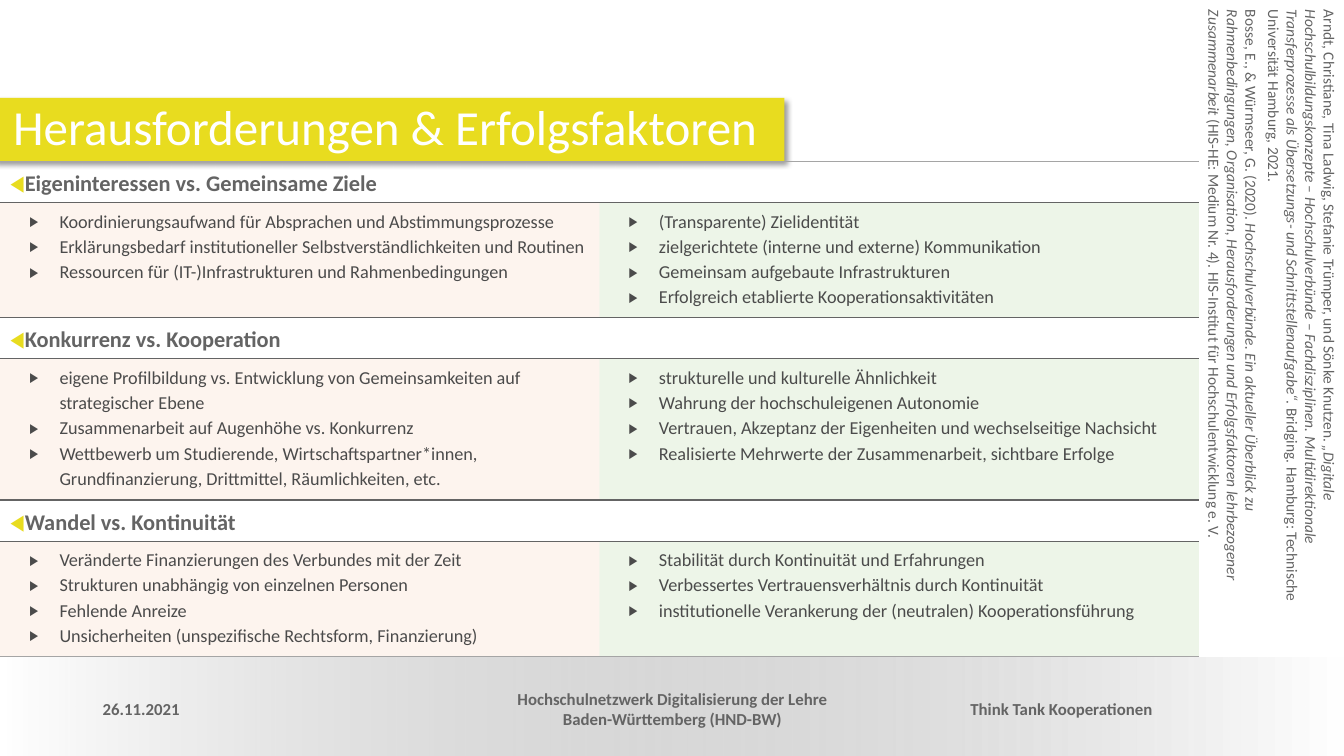
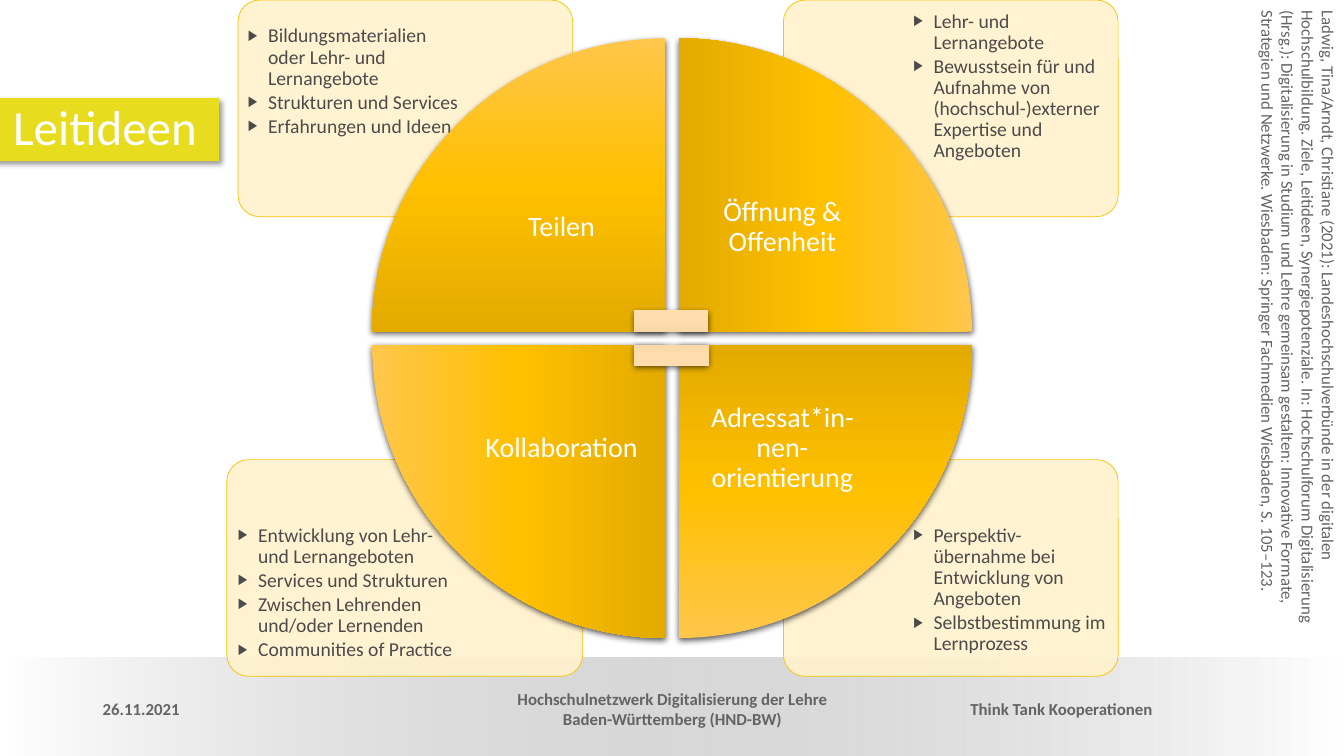
from lxml import etree
from pptx import Presentation
from pptx import util as u
from pptx.dml.color import RGBColor
from pptx.enum import shapes as kinds
from pptx.enum import text as t
from pptx.oxml.ns import qn

Inches = u.Inches
WHITE = RGBColor(0xFF, 0xFF, 0xFF)
BLACK = RGBColor(0, 0, 0)
GREY = RGBColor(0x64, 0x64, 0x64)
DARK_GREY = RGBColor(0x4B, 0x4B, 0x4B)
LIGHT_GREY = RGBColor(0xA5, 0xA5, 0xA5)
LIME = RGBColor(0xE8, 0xDC, 0x1F)
PEACH = RGBColor(0xF8, 0xCB, 0xAD)
GREEN = RGBColor(0xA9, 0xD1, 0x8E)
CREAM = RGBColor(0xFF, 0xF2, 0xCC)
AMBER = RGBColor(0xFF, 0xC0, 0x00)
BAND_STOPS = [(0, GREY, 0), (100, WHITE, 100)]
WEDGE_STOPS = [(0, RGBColor(0xFF, 0xC6, 0x4B), 100), (50, AMBER, 100),
               (100, RGBColor(0xE3, 0xAB, 0x00), 100)]
MINUS_STOPS = [(0, RGBColor(0xFF, 0xE2, 0xB9), 100),
               (50, RGBColor(0xFF, 0xDC, 0xAB), 100),
               (100, RGBColor(0xE5, 0xC4, 0x96), 100)]
TITLE_SHADOW = {"alpha": 40, "blur": 4, "distance": 3, "angle": 45}
CYCLE_SHADOW = {"alpha": 63, "blur": 4.5, "distance": 1.5, "angle": 90}

LEFT, CENTER, RIGHT = t.PP_ALIGN.LEFT, t.PP_ALIGN.CENTER, t.PP_ALIGN.RIGHT
TOP, MIDDLE = t.MSO_ANCHOR.TOP, t.MSO_ANCHOR.MIDDLE
NO_STYLE = "{2D5ABB26-0587-4C30-8999-92F81FD0307C}"

TITLE_FONT = {"size": u.Pt(35), "color": WHITE}
FOOTER_FONT = {"size": u.Pt(12), "color": GREY, "bold": True}
HEADING_FONT = {"size": u.Pt(16), "color": GREY, "bold": True}
CELL_FONT = {"size": u.Pt(13), "color": DARK_GREY}
CALLOUT_FONT = {"size": u.Pt(14), "color": DARK_GREY}
WEDGE_FONT = {"size": u.Pt(20), "color": WHITE}

FOOTERS = [
    (0.92, 3, LEFT, "26.11.2021"),
    (4.8, 3.74, CENTER,
     "Hochschulnetzwerk Digitalisierung der Lehre Baden-Württemberg (HND-BW)"),
    (8.77, 2.76, RIGHT, "Think Tank Kooperationen"),
]

CHALLENGES = [
    ("Eigeninteressen vs. Gemeinsame Ziele", 1.14,
     ["Koordinierungsaufwand für Absprachen und Abstimmungsprozesse",
      "Erklärungsbedarf institutioneller Selbstverständlichkeiten und Routinen",
      "Ressourcen für (IT-)Infrastrukturen und Rahmenbedingungen"],
     ["(Transparente) Zielidentität",
      "zielgerichtete (interne und externe) Kommunikation",
      "Gemeinsam aufgebaute Infrastrukturen",
      "Erfolgreich etablierte Kooperationsaktivitäten"]),
    ("Konkurrenz vs. Kooperation", 1.4,
     ["eigene Profilbildung vs. Entwicklung von Gemeinsamkeiten auf "
      "strategischer Ebene",
      "Zusammenarbeit auf Augenhöhe vs. Konkurrenz",
      "Wettbewerb um Studierende, Wirtschaftspartner*innen, "
      "Grundfinanzierung, Drittmittel, Räumlichkeiten, etc."],
     ["strukturelle und kulturelle Ähnlichkeit",
      "Wahrung der hochschuleigenen Autonomie",
      "Vertrauen, Akzeptanz der Eigenheiten und wechselseitige Nachsicht",
      "Realisierte Mehrwerte der Zusammenarbeit, sichtbare Erfolge"]),
    ("Wandel vs. Kontinuität", 1.14,
     ["Veränderte Finanzierungen des Verbundes mit der Zeit",
      "Strukturen unabhängig von einzelnen Personen",
      "Fehlende Anreize",
      "Unsicherheiten (unspezifische Rechtsform, Finanzierung)"],
     ["Stabilität durch Kontinuität und Erfahrungen",
      "Verbessertes Vertrauensverhältnis durch Kontinuität",
      "institutionelle Verankerung der (neutralen) Kooperationsführung"]),
]

# Each paragraph is a list of (text, italic) runs.
CHALLENGE_SOURCES = [
    [("Arndt, Christiane, Tina Ladwig, Stefanie Trümper, und Sönke Knutzen. ", False),
     ("„Digitale Hochschulbildungskonzepte – Hochschulverbünde – "
      "Fachdisziplinen. Multidirektionale Transferprozesse als Übersetzungs- "
      "und Schnittstellenaufgabe“", True),
     (". Bridging. Hamburg: Technische Universität Hamburg, 2021.", False)],
    [("Bosse, E., & Würmseer, G. (2020). ", False),
     ("Hochschulverbünde. Ein aktueller Überblick zu Rahmenbedingungen, "
      "Organisation, Herausforderungen und Erfolgsfaktoren lehrbezogener "
      "Zusammenarbeit", True),
     (" (HIS-HE: Medium Nr. 4). HIS-Institut für Hochschulentwicklung e. V.", False)],
]
IDEA_SOURCES = [
    "Ladwig, Tina/Arndt, Christiane (2021): Landeshochschulverbünde in der "
    "digitalen Hochschulbildung. Ziele, Leitideen, Synergiepotenziale. In: "
    "Hochschulforum Digitalisierung (Hrsg.): Digitalisierung in Studium und "
    "Lehre gemeinsam gestalten: Innovative Formate, Strategien und Netzwerke. "
    "Wiesbaden: Springer Fachmedien Wiesbaden, S. 105–123."]

# Callout box, text offset, text width, text indent, anchor, bullets
CALLOUTS = [
    ((7.77, 4.56, 3.32, 2.15), (1.04, 0.59), 2.23, 0.39, TOP,
     ["Perspektiv-übernahme bei Entwicklung von Angeboten",
      "Selbstbestimmung im Lernprozess"]),
    ((2.25, 4.56, 3.53, 2.15), (0.05, 0.59), 2.37, 0.2, TOP,
     ["Entwicklung von Lehr- und Lernangeboten",
      "Services und Strukturen",
      "Zwischen Lehrenden und/oder Lernenden",
      "Communities of Practice"]),
    ((7.77, 0, 3.32, 2.15), (1.04, 0.05), 2.23, 0.39, TOP,
     ["Lehr- und Lernangebote",
      "Bewusstsein für und Aufnahme von (hochschul-)externer Expertise "
      "und Angeboten"]),
    ((2.36, 0, 3.32, 2.15), (0.04, 0.05), 2.23, 0.2, MIDDLE,
     ["Bildungsmaterialien oder Lehr- und Lernangebote",
      "Strukturen und Services",
      "Erfahrungen und Ideen"]),
]
# Label, column, row, rotation
WEDGES = [("Teilen", 0, 0, 0), ("Öffnung & Offenheit", 1, 0, 90),
          ("Adressat*in-nen-orientierung", 1, 1, 180), ("Kollaboration", 0, 1, 270)]


def inches(*lengths):
    return [Inches(length) for length in lengths]


def set_attributes(target, values):
    for name, value in values.items():
        setattr(target, name, value)


def add_color(parent, color, alpha=100):
    element = etree.SubElement(parent, qn("a:srgbClr"), val=str(color))
    if alpha < 100:
        etree.SubElement(element, qn("a:alpha"), val=str(alpha * 1000))


def set_solid(fill, element, color, alpha):
    """Fill with a colour that is partly see-through."""
    fill.solid()
    fill.fore_color.rgb = color
    solid = element.find(qn("a:solidFill"))
    solid.clear()
    add_color(solid, color, alpha)


def set_gradient(shape, stops, angle):
    shape.fill.gradient()
    shape.fill.gradient_angle = angle
    stop_list = shape.element.spPr.find(".//" + qn("a:gsLst"))
    stop_list.clear()
    for position, color, alpha in stops:
        stop = etree.SubElement(stop_list, qn("a:gs"), pos=str(position * 1000))
        add_color(stop, color, alpha)


def set_shadow(shape, alpha, blur, distance, angle):
    shape.shadow.inherit = False
    shadow = etree.SubElement(
        shape.element.spPr.find(qn("a:effectLst")), qn("a:outerShdw"),
        blurRad=str(u.Pt(blur)), dist=str(u.Pt(distance)),
        dir=str(angle * 60000), algn="ctr", rotWithShape="0")
    add_color(shadow, BLACK, alpha)


def add_preset(slide, kind, box):
    shape = slide.shapes.add_shape(kind, *inches(*box))
    shape.shadow.inherit = False
    shape.line.fill.background()
    return shape


def set_bullet(paragraph, character, color, size=100, margin=0, indent=0):
    properties = paragraph._p.get_or_add_pPr()
    properties.set("marL", str(Inches(margin)))
    properties.set("indent", str(Inches(indent)))
    add_color(etree.SubElement(properties, qn("a:buClr")), color)
    etree.SubElement(properties, qn("a:buSzPct"), val=str(size * 1000))
    etree.SubElement(properties, qn("a:buFont"), typeface="Calibri")
    etree.SubElement(properties, qn("a:buChar"), char=character)


def write(frame, paragraphs, font, bullet=None, **paragraph_format):
    """Write strings, or lists of (text, italic) runs, one per paragraph."""
    for index, content in enumerate(paragraphs):
        paragraph = frame.add_paragraph() if index else frame.paragraphs[0]
        if bullet:
            set_bullet(paragraph, **bullet)
        set_attributes(paragraph, paragraph_format)
        for text, italic in [(content, False)] if isinstance(content, str) else content:
            run = paragraph.add_run()
            run.text = text
            values = {"name": "Calibri", "italic": italic, **font}
            run.font.color.rgb = values.pop("color")
            set_attributes(run.font, values)


def add_text(slide, box, paragraphs, font, margin=None, anchor=TOP, **options):
    text_box = slide.shapes.add_textbox(*inches(*box))
    frame = text_box.text_frame
    set_attributes(frame, {"word_wrap": True, "vertical_anchor": anchor})
    if margin is not None:
        for side in ("left", "right", "top", "bottom"):
            setattr(frame, "margin_" + side, Inches(margin))
    write(frame, paragraphs, font, **options)
    return text_box


def start_slide(presentation, title_text, title_width):
    """Add a slide with its title, footer band and footer texts."""
    slide = presentation.slides.add_slide(presentation.slide_layouts[5])
    title = slide.shapes.title
    left, top, width, height = inches(-0.07, 0.97, title_width, 0.63)
    set_attributes(title, {"left": left, "top": top, "width": width, "height": height})
    title.fill.solid()
    title.fill.fore_color.rgb = LIME
    set_shadow(title, **TITLE_SHADOW)
    set_attributes(title.text_frame, {
        "auto_size": t.MSO_AUTO_SIZE.NONE, "word_wrap": True,
        "vertical_anchor": MIDDLE, "margin_left": Inches(0.2),
        "margin_right": Inches(0.1)})
    write(title.text_frame, [title_text], TITLE_FONT, alignment=LEFT, line_spacing=0.9)

    band = add_preset(slide, kinds.MSO_SHAPE.RECTANGLE, (0, 6.52, 13.33, 0.98))
    set_gradient(band, BAND_STOPS, 0)
    for left, width, alignment, text in FOOTERS:
        add_text(slide, (left, 6.83, width, 0.4), [text], FOOTER_FONT,
                 anchor=MIDDLE, alignment=alignment)
    return slide


def add_sources(slide, box, paragraphs, size, space_after=0):
    """Add the literature references, turned to read downwards."""
    font = {"size": u.Pt(size), "color": GREY}
    text_box = add_text(slide, box, paragraphs, font, space_after=u.Pt(space_after))
    text_box.rotation = 90


def set_borders(cell, top, bottom):
    for index, (tag, color) in enumerate((("a:lnT", top), ("a:lnB", bottom))):
        line = etree.Element(qn(tag), w=str(u.Pt(1)))
        add_color(etree.SubElement(line, qn("a:solidFill")), color)
        cell._tc.get_or_add_tcPr().insert(index, line)


def add_challenge_table(slide, left, top, width):
    heights = [height for _, body, *_ in CHALLENGES for height in (0.41, body)]
    frame = slide.shapes.add_table(
        len(heights), 2, *inches(left, top, width, sum(heights)))
    frame.element.find(".//" + qn("a:tableStyleId")).text = NO_STYLE
    table = frame.table
    set_attributes(table, {"first_row": False, "horz_banding": False})
    for column in table.columns:
        column.width = Inches(width / 2)
    for row, height in zip(table.rows, heights):
        row.height = Inches(height)

    heading_bullet = {"character": "◀", "color": LIME}
    item_bullet = {"character": "▶", "color": DARK_GREY, "size": 75,
                   "margin": 0.49, "indent": -0.3}
    for group, (heading, _, *lists) in enumerate(CHALLENGES):
        first, last = group == 0, group == len(CHALLENGES) - 1
        write(table.cell(2 * group, 0).text_frame, [heading], HEADING_FONT,
              heading_bullet, line_spacing=1.14)
        for column, (items, color) in enumerate(zip(lists, (PEACH, GREEN))):
            head, body = (table.cell(2 * group + row, column) for row in (0, 1))
            head.fill.background()
            set_solid(body.fill, body._tc.get_or_add_tcPr(), color, 20)
            set_borders(head, LIGHT_GREY if first else GREY, GREY)
            set_borders(body, GREY, LIGHT_GREY if last else GREY)
            write(body.text_frame, items, CELL_FONT, item_bullet, line_spacing=1.14)


def add_callout(slide, box, offset, text_width, indent, anchor, items):
    shape = add_preset(slide, kinds.MSO_SHAPE.ROUNDED_RECTANGLE, box)
    shape.adjustments[0] = 0.1
    set_solid(shape.fill, shape.element.spPr, CREAM, 90)
    shape.line.color.rgb = AMBER
    shape.line.width = u.Pt(0.5)
    bullet = {"character": "▶", "color": DARK_GREY, "size": 75,
              "margin": indent, "indent": -0.2}
    add_text(slide, (box[0] + offset[0], box[1] + offset[1], text_width, 1.52),
             items, CALLOUT_FONT, 0.06, anchor, bullet=bullet,
             line_spacing=0.9, space_after=u.Pt(2))


def add_cycle_part(slide, kind, box, rotation, stops):
    shape = add_preset(slide, kind, box)
    shape.rotation = rotation
    set_gradient(shape, stops, 270)
    set_shadow(shape, **CYCLE_SHADOW)


def add_cycle(slide, left, top, wedge=2.91, gap=0.13, label=2.06):
    """Add four labelled quarter circles with two bars at their centre."""
    for text, column, row, rotation in WEDGES:
        x = left + column * (wedge + gap)
        y = top + row * (wedge + gap)
        add_cycle_part(slide, kinds.MSO_SHAPE.PIE_WEDGE, (x, y, wedge, wedge),
                       rotation, WEDGE_STOPS)
        inset = wedge - label
        add_text(slide, (x + inset * (1 - column), y + inset * (1 - row), label, label),
                 [text], WEDGE_FONT, 0.16, MIDDLE, alignment=CENTER, line_spacing=0.9)
    for offset, rotation in ((2.37, 0), (2.71, 180)):
        add_cycle_part(slide, kinds.MSO_SHAPE.MATH_MINUS,
                       (left + 2.47, top + offset, 1, 0.87), rotation, MINUS_STOPS)


def build_challenges(presentation):
    slide = start_slide(presentation, "Herausforderungen & Erfolgsfaktoren", 7.85)
    add_challenge_table(slide, 0, 1.6, 11.89)
    add_sources(slide, (9.36, 2.53, 6.5, 1.44), CHALLENGE_SOURCES, 11, 3)


def build_ideas(presentation):
    slide = start_slide(presentation, "Leitideen", 2.24)
    add_sources(slide, (9.62, 2.8, 6.5, 0.91), IDEA_SOURCES, 12)
    for callout in CALLOUTS:
        add_callout(slide, *callout)
    add_cycle(slide, 3.69, 0.38)


def main():
    presentation = Presentation()
    presentation.slide_width, presentation.slide_height = inches(13.33, 7.5)
    build_challenges(presentation)
    build_ideas(presentation)
    presentation.save("out.pptx")


if __name__ == "__main__":
    main()
